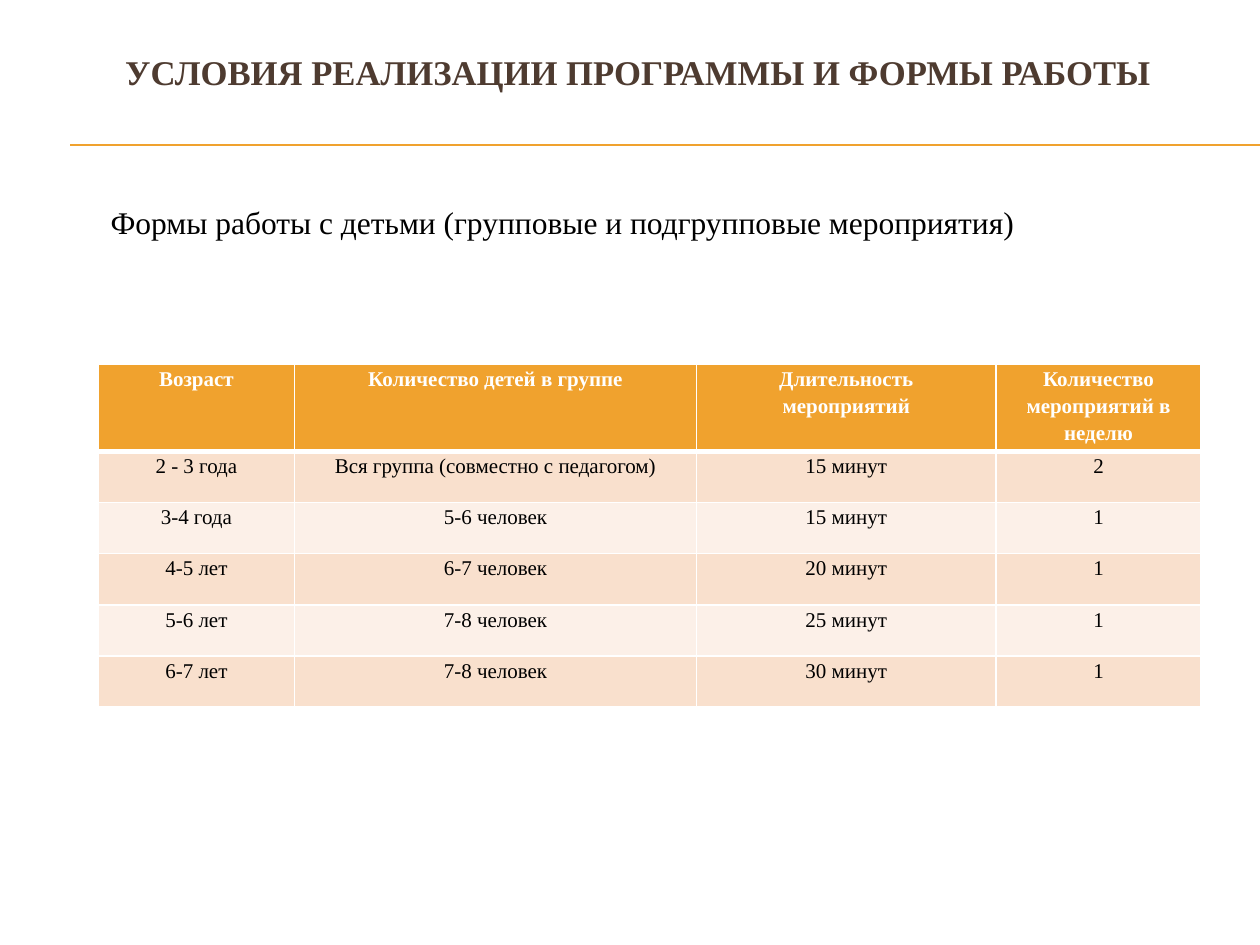
from dataclasses import dataclass

from lxml import etree
from pptx import Presentation
from pptx.dml.color import RGBColor
from pptx.enum import shapes, text
from pptx.oxml import ns
from pptx.util import Cm, Pt


@dataclass(frozen=True)
class Theme:
    font: str = "Times New Roman"
    accent: str = "F0A22E"
    title: str = "4E3B30"
    body: str = "000000"
    white: str = "FFFFFF"
    bands: tuple = ("F9E0CD", "FCF0E8")
    title_size: float = 19.8
    body_size: float = 18
    cell_size: float = 12


THEME = Theme()
CENTER = text.PP_ALIGN.CENTER

HEADER = ["Возраст", "Количество детей в группе", "Длительность\nмероприятий",
          "Количество мероприятий в неделю"]
ROWS = [
    ["2 - 3 года", "Вся группа (совместно с педагогом)", "15 минут", "2"],
    ["3-4 года", "5-6 человек", "15 минут", "1"],
    ["4-5 лет", "6-7 человек", "20 минут", "1"],
    ["5-6 лет", "7-8 человек", "25 минут", "1"],
    ["6-7 лет", "7-8 человек", "30 минут", "1"],
]


def write(tf, content, size, color, bold=False, align=None, spacing=None):
    for i, line in enumerate(content.split("\n")):
        p = tf.add_paragraph() if i else tf.paragraphs[0]
        p.alignment = align
        p.line_spacing = spacing
        r = p.add_run()
        r.text = line
        r.font.name = THEME.font
        r.font.size = Pt(size)
        r.font.bold = bold
        r.font.color.rgb = RGBColor.from_string(color)


def add_text(s, content, left, top, width, height, anchor, **fmt):
    sp = s.shapes.add_textbox(Cm(left), Cm(top), Cm(width), Cm(height))
    tf = sp.text_frame
    tf.word_wrap = True
    tf.vertical_anchor = anchor
    write(tf, content, **fmt)


def add_rule(s, left, right, y):
    line = s.shapes.add_connector(shapes.MSO_CONNECTOR.STRAIGHT,
                                  Cm(left), Cm(y), Cm(right), Cm(y))
    line.line.color.rgb = RGBColor.from_string(THEME.accent)
    line.line.width = Pt(0.75)
    etree.SubElement(line._element.spPr, ns.qn("a:effectLst"))


def set_borders(cell, **widths):
    tc_pr = cell._tc.get_or_add_tcPr()
    for i, (side, width) in enumerate(widths.items()):
        ln = etree.Element(ns.qn(f"a:ln{side}"), w=str(Pt(width)))
        fill = etree.SubElement(ln, ns.qn("a:solidFill"))
        etree.SubElement(fill, ns.qn("a:srgbClr"), val=THEME.white)
        tc_pr.insert(i, ln)


def fill_cell(cell, content, fill, color, bold, top, bottom):
    cell.margin_left = cell.margin_right = Cm(0.02)
    cell.margin_top = cell.margin_bottom = 0
    cell.fill.solid()
    cell.fill.fore_color.rgb = RGBColor.from_string(fill)
    write(cell.text_frame, content, THEME.cell_size, color, bold, CENTER, 1.15)
    set_borders(cell, L=1, R=1, T=top, B=bottom)


def add_schedule(s, left, top, widths, row_height):
    rows = [HEADER] + ROWS
    table = s.shapes.add_table(len(rows), len(widths), Cm(left), Cm(top),
                               Cm(sum(widths)), Cm(row_height * len(rows))).table
    for column, width in zip(table.columns, widths):
        column.width = Cm(width)
    for i, values in enumerate(rows):
        table.rows[i].height = Cm(row_height)
        head = i == 0
        fill = THEME.accent if head else THEME.bands[(i - 1) % 2]
        color = THEME.white if head else THEME.body
        for j, value in enumerate(values):
            fill_cell(table.cell(i, j), value, fill, color, head,
                      top=3 if i == 1 else 1, bottom=3 if head else 1)


def main():
    prs = Presentation()
    prs.slide_width, prs.slide_height = Cm(25.4), Cm(19.05)
    s = prs.slides.add_slide(prs.slide_layouts[6])
    for y in (2.92, 2.94):
        add_rule(s, 1.42, 25.4, y)
    add_text(s, "УСЛОВИЯ РЕАЛИЗАЦИИ ПРОГРАММЫ И ФОРМЫ РАБОТЫ",
             0.79, 0.95, 24.13, 1, text.MSO_ANCHOR.MIDDLE,
             size=THEME.title_size, color=THEME.title, bold=True, align=CENTER)
    add_schedule(s, 1.98, 7.35, [3.96, 8.1, 6.04, 4.13], 1.03)
    add_text(s, "Формы работы с детьми (групповые и подгрупповые мероприятия)",
             1.98, 3.96, 21.03, 1.02, text.MSO_ANCHOR.TOP,
             size=THEME.body_size, color=THEME.body)
    prs.save("out.pptx")


if __name__ == "__main__":
    main()
